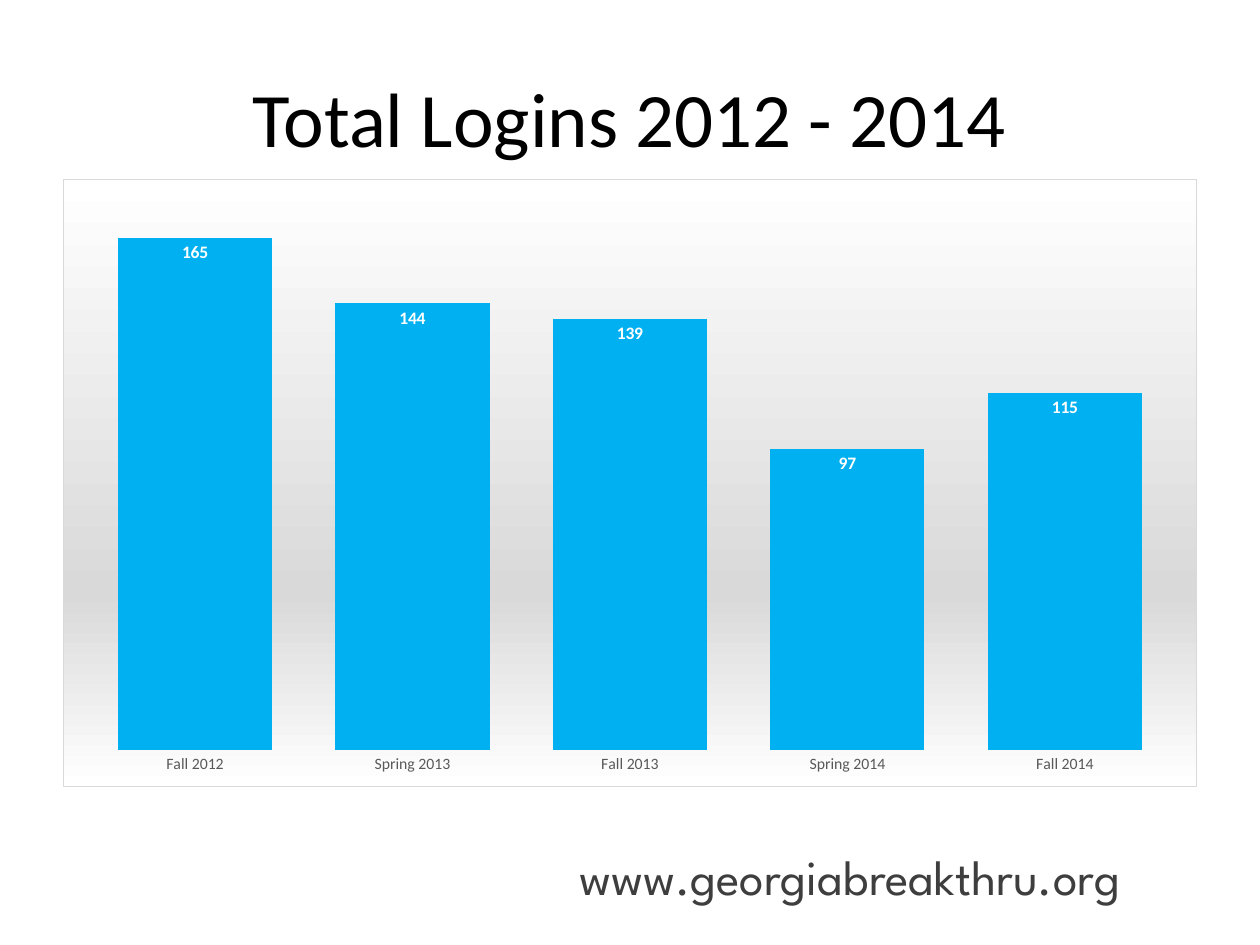
"""Build the total logins slide with its column chart."""
from dataclasses import dataclass
from typing import NamedTuple

from lxml import etree
from pptx import Presentation
from pptx import util as u
from pptx.chart.data import CategoryChartData
from pptx.dml.color import RGBColor
from pptx.enum import chart as charts, text
from pptx.oxml import parse_xml
from pptx.oxml.ns import nsdecls, qn

EMU_PER_PX = 914400 / 126


class Box(NamedTuple):
    left: int
    top: int
    width: int
    height: int

    def emu(self) -> list[u.Emu]:
        return [u.Emu(round(length * EMU_PER_PX)) for length in self]


@dataclass(frozen=True)
class Style:
    font: str
    size: int
    color: str
    bold: bool = False


@dataclass(frozen=True)
class Theme:
    title: Style = Style("Calibri", 44, "000000")
    address: Style = Style("League Spartan", 28, "3E3E3E")
    chart: Style = Style("Calibri", 10, "000000")
    category: Style = Style("Calibri", 9, "595959")
    value: Style = Style("Calibri", 10, "FFFFFF", True)
    bar: str = "00B0F0"
    border: str = "D9D9D9"
    gradient: tuple = ((0, "FFFFFF"), (68, "D9D9D9"), (100, "FFFFFF"))


@dataclass(frozen=True)
class Label:
    box: Box
    words: str
    style: Style
    align: text.PP_ALIGN
    anchor: text.MSO_ANCHOR


THEME = Theme()
LABELS = (
    Label(Box(63, 38, 1134, 157), "Total Logins 2012 - 2014", THEME.title,
          text.PP_ALIGN.CENTER, text.MSO_ANCHOR.MIDDLE),
    Label(Box(567, 840, 672, 50), "www.georgiabreakthru.org", THEME.address,
          text.PP_ALIGN.LEFT, text.MSO_ANCHOR.TOP),
)
CHART_BOX = Box(63, 179, 1134, 608)
LOGINS = {"Fall 2012": 165, "Spring 2013": 144, "Fall 2013": 139,
          "Spring 2014": 97, "Fall 2014": 115}


def apply_style(font, style: Style) -> None:
    font.name = style.font
    font.size = u.Pt(style.size)
    font.bold = style.bold
    font.color.rgb = RGBColor.from_string(style.color)


def add_label(slide, label: Label) -> None:
    frame = slide.shapes.add_textbox(*label.box.emu()).text_frame
    frame.word_wrap = True
    frame.vertical_anchor = label.anchor
    paragraph = frame.paragraphs[0]
    paragraph.alignment = label.align
    run = paragraph.add_run()
    run.text = label.words
    apply_style(run.font, label.style)


def paint_chart_area(chart) -> None:
    stops = "".join(
        f'<a:gs pos="{percent * 1000}"><a:srgbClr val="{color}"/></a:gs>'
        for percent, color in THEME.gradient)
    area = parse_xml(
        f'<c:spPr {nsdecls("c", "a")}><a:gradFill><a:gsLst>{stops}</a:gsLst>'
        f'<a:lin ang="5400000" scaled="0"/></a:gradFill><a:ln w="{u.Pt(0.75)}">'
        f'<a:solidFill><a:srgbClr val="{THEME.border}"/></a:solidFill></a:ln></c:spPr>')
    chart.element.find(qn("c:chart")).addnext(area)


def place_plot(chart, x: float, y: float, w: float, h: float) -> None:
    plot_area = chart.element.find(qn("c:chart")).find(qn("c:plotArea"))
    for layout in plot_area.findall(qn("c:layout")):
        plot_area.remove(layout)
    layout = parse_xml(f'<c:layout {nsdecls("c")}><c:manualLayout/></c:layout>')
    settings = {"layoutTarget": "inner", "xMode": "edge", "yMode": "edge",
                "x": x, "y": y, "w": w, "h": h}
    for tag, setting in settings.items():
        etree.SubElement(layout[0], qn(f"c:{tag}")).set("val", str(setting))
    plot_area.insert(0, layout)


def add_logins_chart(slide) -> None:
    data = CategoryChartData()
    data.categories = list(LOGINS)
    data.add_series("Series 1", list(LOGINS.values()))
    chart = slide.shapes.add_chart(
        charts.XL_CHART_TYPE.COLUMN_CLUSTERED, *CHART_BOX.emu(), data).chart
    apply_style(chart.font, THEME.chart)
    chart.has_legend = False
    chart.has_title = False
    paint_chart_area(chart)
    place_plot(chart, 0.02, 0.02, 0.96, 0.92)

    value_axis = chart.value_axis
    value_axis.minimum_scale, value_axis.maximum_scale = 0, 180
    value_axis.has_major_gridlines = False
    value_axis.visible = False
    category_axis = chart.category_axis
    category_axis.major_tick_mark = charts.XL_TICK_MARK.NONE
    category_axis.format.line.fill.background()
    apply_style(category_axis.tick_labels.font, THEME.category)

    plot = chart.plots[0]
    plot.gap_width = 41
    plot.vary_by_categories = False
    series = plot.series[0]
    series.format.fill.solid()
    series.format.fill.fore_color.rgb = RGBColor.from_string(THEME.bar)
    labels = series.data_labels
    labels.show_value = True
    labels.position = charts.XL_LABEL_POSITION.INSIDE_END
    apply_style(labels.font, THEME.value)


def main() -> None:
    presentation = Presentation()
    presentation.slide_width, presentation.slide_height = Box(0, 0, 1260, 945).emu()[2:]
    slide = presentation.slides.add_slide(presentation.slide_layouts[6])
    for label in LABELS:
        add_label(slide, label)
    add_logins_chart(slide)
    presentation.save("out.pptx")


if __name__ == "__main__":
    main()
